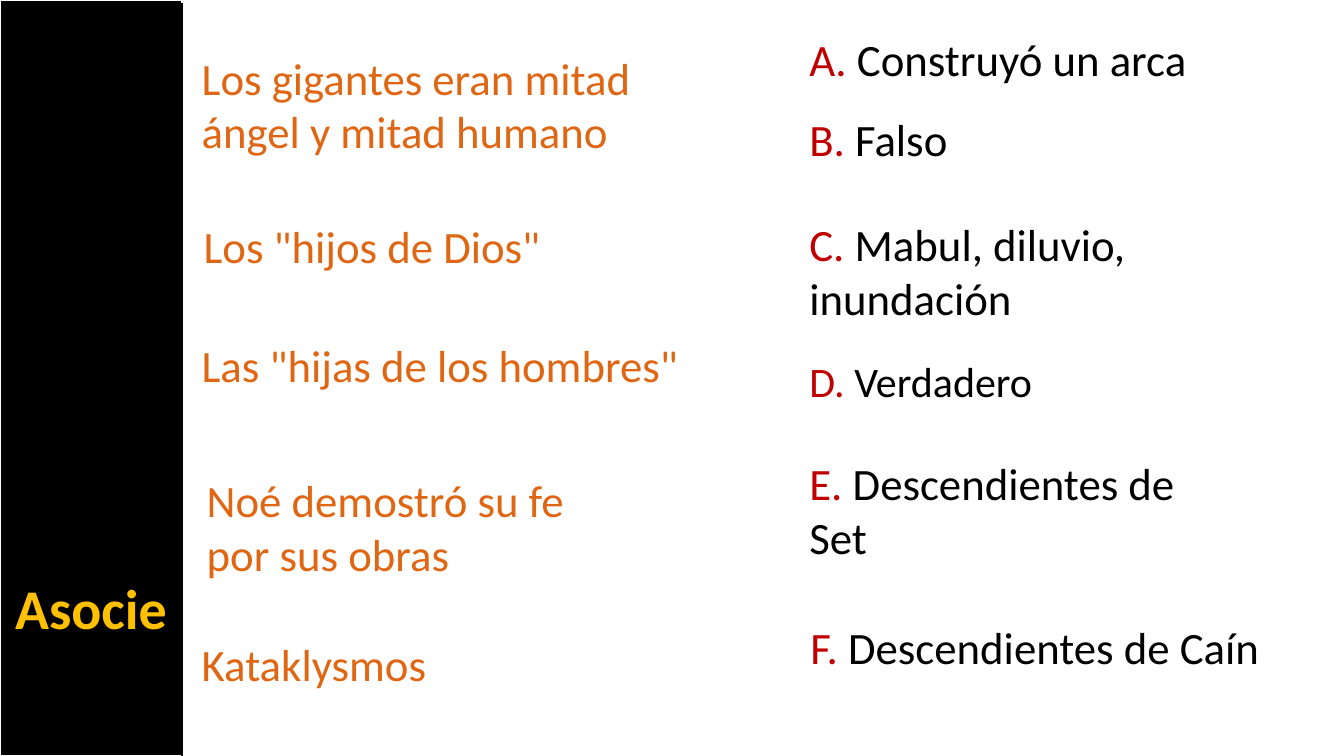
from lxml import etree
from pptx import Presentation
from pptx.dml.color import RGBColor
from pptx.enum import shapes, text
from pptx.oxml import ns
from pptx.util import Pt

COLORS = {"black": "000000", "white": "FFFFFF", "clue": "DF6613",
          "letter": "C00000", "title": "FFC000"}
WIDTH, HEIGHT = 960, 540
BAND = 130
CLUES = [
    (0, 32.4, 336, "Los gigantes eran mitad ángel y mitad humano"),
    (1.4, 152.6, 333, 'Los "hijos de Dios"'),
    (0, 237.6, 366, 'Las "hijas de los hombres"'),
    (3.6, 334, 316, "Noé demostró su fe por sus obras"),
    (0, 451.4, 330, "Kataklysmos"),
]
ANSWERS = [
    (0, 19.4, 352, "Construyó un arca", 32),
    (0, 76.3, 352, "Falso", 32),
    (0, 151.2, 368, "Mabul, diluvio, inundación", 32),
    (0, 250.6, 247, "Verdadero", 30),
    (0, 321.8, 317.5, "Descendientes de Set", 32),
    (0.7, 439.2, 351, "Descendientes de Caín", 32),
]


def color(name):
    return RGBColor.from_string(COLORS[name])


def add_label(slide, left, top, width, runs, size=32, bold=False, align=None):
    box = slide.shapes.add_textbox(Pt(left), Pt(top), Pt(width), Pt(size * 1.44))
    frame = box.text_frame
    frame.word_wrap = True
    frame.auto_size = text.MSO_AUTO_SIZE.SHAPE_TO_FIT_TEXT
    para = frame.paragraphs[0]
    para.alignment = align
    para.font.name = "Calibri"
    para.font.size = Pt(size)
    para.font.bold = bold
    for words, shade in runs:
        run = para.add_run()
        run.text = words
        run.font.color.rgb = color(shade)


def add_band(slide, left, top, width, height):
    band = slide.shapes.add_shape(shapes.MSO_SHAPE.RECTANGLE,
                                  Pt(left), Pt(top), Pt(width), Pt(height))
    band.shadow.inherit = False
    band.fill.solid()
    band.fill.fore_color.rgb = color("black")
    band.line.color.rgb = color("white")
    band.line.width = Pt(1.5)


def add_title(slide, left, top, width):
    add_label(slide, left, top + 406, width, [("Asocie", "title")],
              40, True, text.PP_ALIGN.CENTER)


def add_edge(slide, left, top, height):
    edge = slide.shapes.add_connector(shapes.MSO_CONNECTOR.STRAIGHT,
                                      Pt(left), Pt(top + 2), Pt(left), Pt(top + height))
    edge.line.color.rgb = color("black")
    edge.line.width = Pt(1)
    etree.SubElement(edge._element.spPr, ns.qn("a:effectLst"))


def add_clues(slide, left, top):
    for shift, drop, width, words in CLUES:
        add_label(slide, left + shift, top + drop, width, [(words, "clue")])


def add_answers(slide, left, top):
    for letter, (shift, drop, width, words, size) in zip("ABCDEF", ANSWERS):
        add_label(slide, left + shift, top + drop, width,
                  [(f"{letter}. ", "letter"), (words, "black")], size)


def main():
    deck = Presentation()
    deck.slide_width, deck.slide_height = Pt(WIDTH), Pt(HEIGHT)
    slide = deck.slides.add_slide(deck.slide_layouts[6])
    add_band(slide, 0, 0, BAND, HEIGHT)
    add_clues(slide, 137, 0)
    add_answers(slide, 571, 0)
    add_title(slide, 0, 0, BAND)
    add_edge(slide, BAND, 0, HEIGHT)
    deck.save("out.pptx")


if __name__ == "__main__":
    main()
